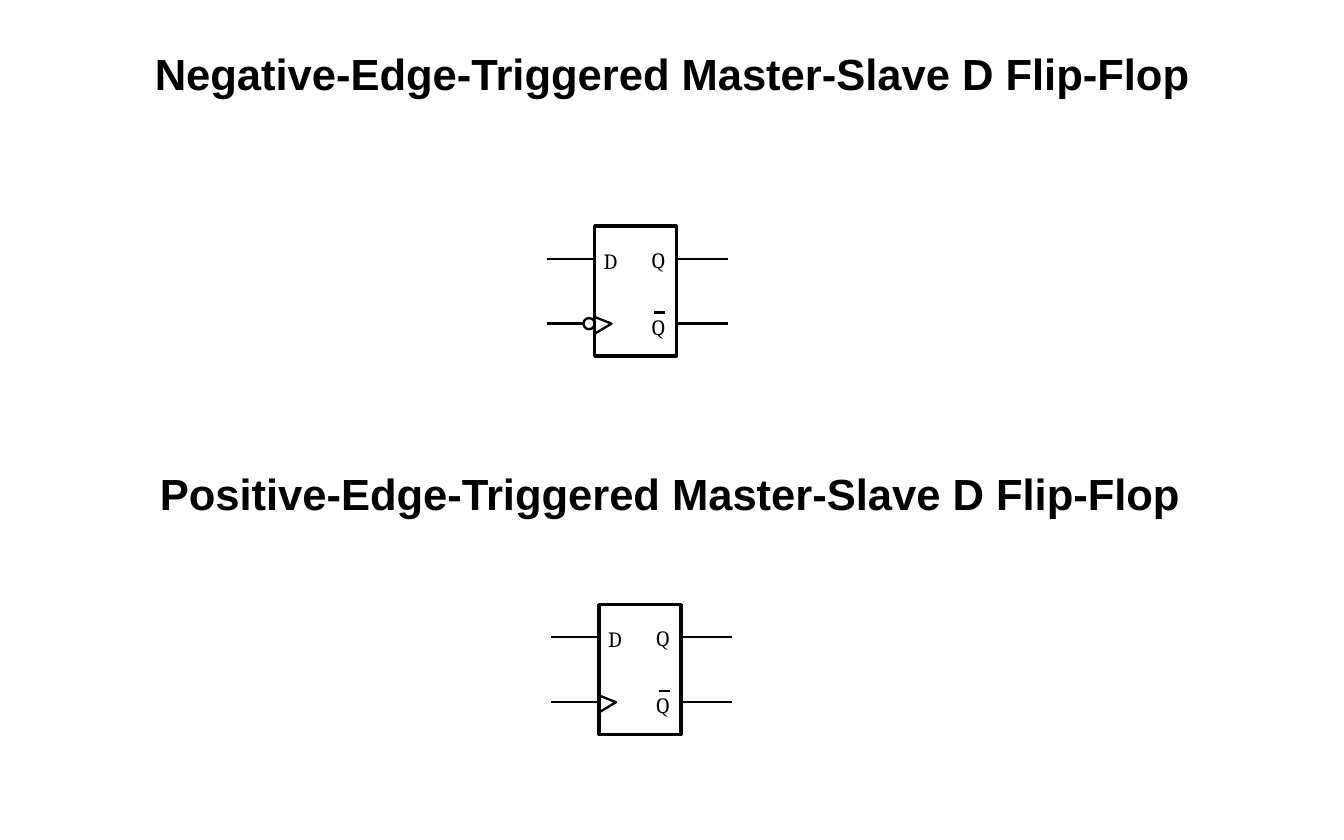
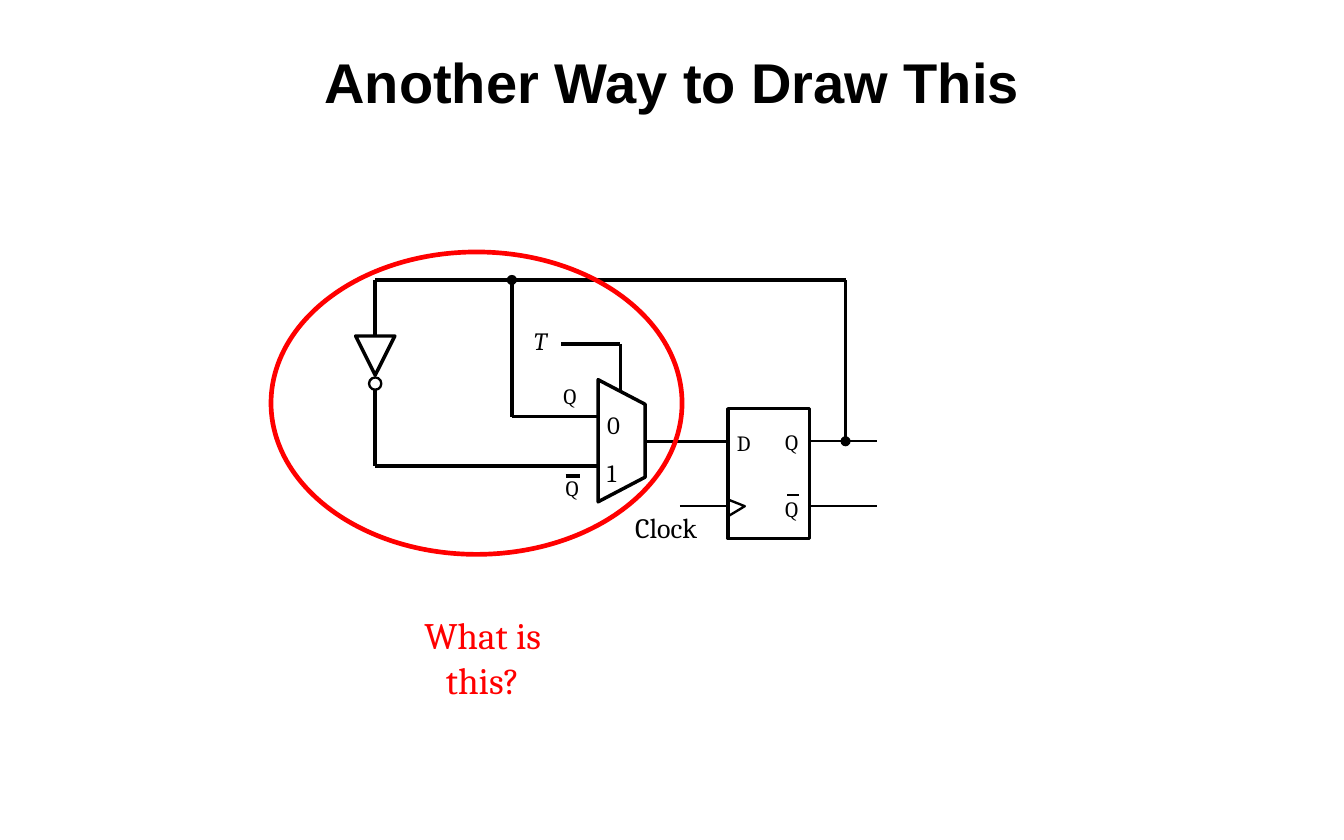
from dataclasses import dataclass

from lxml.etree import SubElement
from pptx import Presentation
from pptx.dml.color import RGBColor
from pptx.enum.shapes import MSO_CONNECTOR as CONNECTOR, MSO_SHAPE as SHAPE
from pptx.enum.text import MSO_AUTO_SIZE as AUTO_SIZE, PP_ALIGN as ALIGN
from pptx.oxml.ns import qn
from pptx.util import Inches, Pt


@dataclass(frozen=True)
class Theme:
    ink: RGBColor = RGBColor(0, 0, 0)
    paper: RGBColor = RGBColor(255, 255, 255)
    accent: RGBColor = RGBColor(255, 0, 0)
    title_font: str = "Arial"
    label_font: str = "Cambria"
    title: float = 36
    long_title: float = 28
    pin: float = 14
    mux_label: float = 16
    clock: float = 18
    question: float = 24
    thin: float = 1.5
    thick: float = 2.25
    ring: float = 3


THEME = Theme()

# Slide 1: title, title position, flip-flop position, clock bubble
EDGE_TYPES = [
    ("Negative-Edge-Triggered Master-Slave D Flip-Flop", (1, 0.33), (5.31, 2.02), True),
    ("Positive-Edge-Triggered Master-Slave D Flip-Flop", (0.98, 4.08), (5.35, 5.4), False),
]

# Flip-flop symbol, relative to its top left corner
FF_W, FF_H = 0.73, 1.16
DATA_Y, CLOCK_Y = 0.29, 0.87
LEAD_IN, LEAD_OUT = 0.43, 0.46
PINS = [("D", 0.08, 0.19), ("Q", 0.51, 0.18), ("Q", 0.51, 0.78)]
BUBBLE = 0.1

# Slide 2: feedback circuit
CIRCUIT_TITLE = "Another Way to Draw This"
FF_X, FF_Y = 6.5, 3.65
INVERTER_X, BRANCH_X, FEEDBACK_X = 3.35, 4.57, 7.55
FEEDBACK_Y, T_Y, IN0_Y, IN1_Y = 2.5, 3.07, 3.72, 4.16
OUT_Y = FF_Y + DATA_Y
MUX_LEFT, MUX_RIGHT, SELECT_X = 5.34, 5.76, 5.54
MUX = [(MUX_RIGHT, 4.26), (MUX_RIGHT, 3.61), (MUX_LEFT, 3.39), (MUX_LEFT, 4.48)]
INVERTER_TOP, INVERTER_SIZE, INVERTER_BUBBLE = 3, 0.35, 0.11
INVERTER = [(INVERTER_X, INVERTER_TOP + INVERTER_SIZE),
            (INVERTER_X - INVERTER_SIZE / 2, INVERTER_TOP),
            (INVERTER_X + INVERTER_SIZE / 2, INVERTER_TOP)]
WIRES = [  # from, to, weight
    ((BRANCH_X, IN0_Y), (MUX_LEFT, IN0_Y), THEME.thick),
    ((INVERTER_X, IN1_Y), (MUX_LEFT, IN1_Y), THEME.thick),
    ((FF_X, OUT_Y), (MUX_RIGHT, OUT_Y), THEME.thick),
    ((SELECT_X, T_Y), (SELECT_X, 3.49), THEME.thick),
    ((5.01, T_Y), (SELECT_X, T_Y), THEME.thick),
    ((FEEDBACK_X, FEEDBACK_Y), (BRANCH_X, FEEDBACK_Y), THEME.thick),
    ((BRANCH_X, FEEDBACK_Y), (BRANCH_X, IN0_Y), THEME.thick),
    ((FEEDBACK_X, FEEDBACK_Y), (FEEDBACK_X, OUT_Y), THEME.thick),
    ((INVERTER_X, FEEDBACK_Y), (BRANCH_X, FEEDBACK_Y), THEME.thick),
    ((INVERTER_X, FEEDBACK_Y), (INVERTER_X, INVERTER_TOP), 2.5),
    ((INVERTER_X, 3.48), (INVERTER_X, IN1_Y), 2.5),
    ((5.05, 4.25), (5.18, 4.25), 2),
]
JUNCTIONS = [(FEEDBACK_X, OUT_Y), (BRANCH_X, FEEDBACK_Y)]
DOT = 0.08
LABELS = [  # text, left, top, size, italic
    ("T", 4.77, 2.91, THEME.mux_label, True),
    ("0", 5.42, 3.66, THEME.mux_label, False),
    ("1", 5.42, 4.09, THEME.mux_label, False),
    ("Q", 5.03, 3.42, THEME.pin, False),
    ("Q", 5.05, 4.24, THEME.pin, False),
    ("Clock", 5.67, 4.56, THEME.clock, False),
]
QUESTION = "What is this?"
RING = (2.42, 2.25, 3.67, 2.7)


def wire(shapes, start, end, weight=THEME.thin):
    line = shapes.add_connector(CONNECTOR.STRAIGHT, *map(Inches, (*start, *end)))
    line.line.color.rgb = THEME.ink
    line.line.width = Pt(weight)
    SubElement(line._element.spPr, qn("a:effectLst"))


def style(shape, weight, fill=None, color=THEME.ink):
    shape.shadow.inherit = False
    if fill is None:
        shape.fill.background()
    else:
        shape.fill.solid()
        shape.fill.fore_color.rgb = fill
    shape.line.color.rgb = color
    shape.line.width = Pt(weight)


def outline(shapes, points, weight, close=True):
    (start_x, start_y), *rest = [(Inches(x), Inches(y)) for x, y in points]
    builder = shapes.build_freeform(start_x, start_y)
    builder.add_line_segments(rest, close=close)
    style(builder.convert_to_shape(), weight)


def preset(shapes, kind, box, weight, fill=None, color=THEME.ink):
    style(shapes.add_shape(kind, *map(Inches, box)), weight, fill, color)


def text(shapes, words, box, size, font=THEME.label_font, color=THEME.ink,
         align=ALIGN.LEFT, bold=False, italic=False):
    frame = shapes.add_textbox(*map(Inches, box)).text_frame
    frame.text = words
    paragraph = frame.paragraphs[0]
    paragraph.alignment = align
    face = paragraph.font
    face.name, face.size, face.bold, face.italic = font, Pt(size), bold, italic
    face.color.rgb = color
    return frame


def title(slide, words, left, top, size):
    frame = text(slide.shapes, words, (left, top, 10, 0.67), size,
                 THEME.title_font, align=ALIGN.CENTER, bold=True)
    frame.word_wrap = True
    frame.margin_top = Inches(0.09)


def label(shapes, words, left, top, size, italic=False):
    width = 0.6 if len(words) > 1 else 0.19
    frame = text(shapes, words, (left, top, width, size / 60), size, italic=italic)
    frame.margin_left = frame.margin_right = frame.margin_top = frame.margin_bottom = 0
    frame.word_wrap = False
    frame.auto_size = AUTO_SIZE.SHAPE_TO_FIT_TEXT


def flip_flop(slide, left, top, bubble=False, data_lead=True, lead_out=LEAD_OUT):
    shapes = slide.shapes.add_group_shape().shapes
    right, data_y, clock_y = left + FF_W, top + DATA_Y, top + CLOCK_Y
    preset(shapes, SHAPE.RECTANGLE, (left, top, FF_W, FF_H), THEME.thick, THEME.paper)
    for name, dx, dy in PINS:
        label(shapes, name, left + dx, top + dy, THEME.pin)
    wire(shapes, (left + 0.53, top + 0.77), (left + 0.63, top + 0.77), 1.38)

    # Clock input: edge mark, with a bubble when it is inverted
    outline(shapes, [(left, clock_y + 0.09), (left + 0.15, clock_y), (left, clock_y - 0.06)],
            THEME.thin, close=False)
    clock_end = left
    if bubble:
        clock_end -= BUBBLE
        preset(shapes, SHAPE.OVAL, (clock_end, clock_y - BUBBLE / 2, BUBBLE, BUBBLE), THEME.thin)
    wire(shapes, (left - LEAD_IN, clock_y), (clock_end, clock_y))

    # Data input and the two outputs
    if data_lead:
        wire(shapes, (left - LEAD_IN, data_y), (left, data_y))
    for y in (data_y, clock_y):
        wire(shapes, (right + lead_out, y), (right, y))


def edge_slide(slide):
    for words, title_at, symbol_at, bubble in EDGE_TYPES:
        title(slide, words, *title_at, THEME.long_title)
        flip_flop(slide, *symbol_at, bubble=bubble)


def circuit_slide(slide):
    shapes = slide.shapes
    title(slide, CIRCUIT_TITLE, 1, 0.33, THEME.title)
    for start, end, weight in WIRES:
        wire(shapes, start, end, weight)
    outline(shapes, MUX, THEME.thick)
    flip_flop(slide, FF_X, FF_Y, data_lead=False, lead_out=0.6)
    for x, y in JUNCTIONS:
        preset(shapes, SHAPE.OVAL, (x - DOT / 2, y - DOT / 2, DOT, DOT), 0.75, THEME.ink)
    for item in LABELS:
        label(shapes, *item)

    # Inverter with its bubble
    inverter = shapes.add_group_shape().shapes
    outline(inverter, INVERTER, THEME.thick)
    preset(inverter, SHAPE.OVAL,
           (INVERTER_X - INVERTER_BUBBLE / 2, 3.37, INVERTER_BUBBLE, INVERTER_BUBBLE),
           THEME.thin, THEME.paper)

    # Question about the ringed part
    question = text(shapes, QUESTION, (3.36, 5.42, 1.9, 0.9), THEME.question,
                    color=THEME.accent, align=ALIGN.CENTER)
    question.word_wrap = True
    preset(shapes, SHAPE.OVAL, RING, THEME.ring, color=THEME.accent)


def main():
    deck = Presentation()
    deck.slide_width, deck.slide_height = Inches(12), Inches(7.5)
    for build in (edge_slide, circuit_slide):
        build(deck.slides.add_slide(deck.slide_layouts[6]))
    deck.save("out.pptx")


if __name__ == "__main__":
    main()
